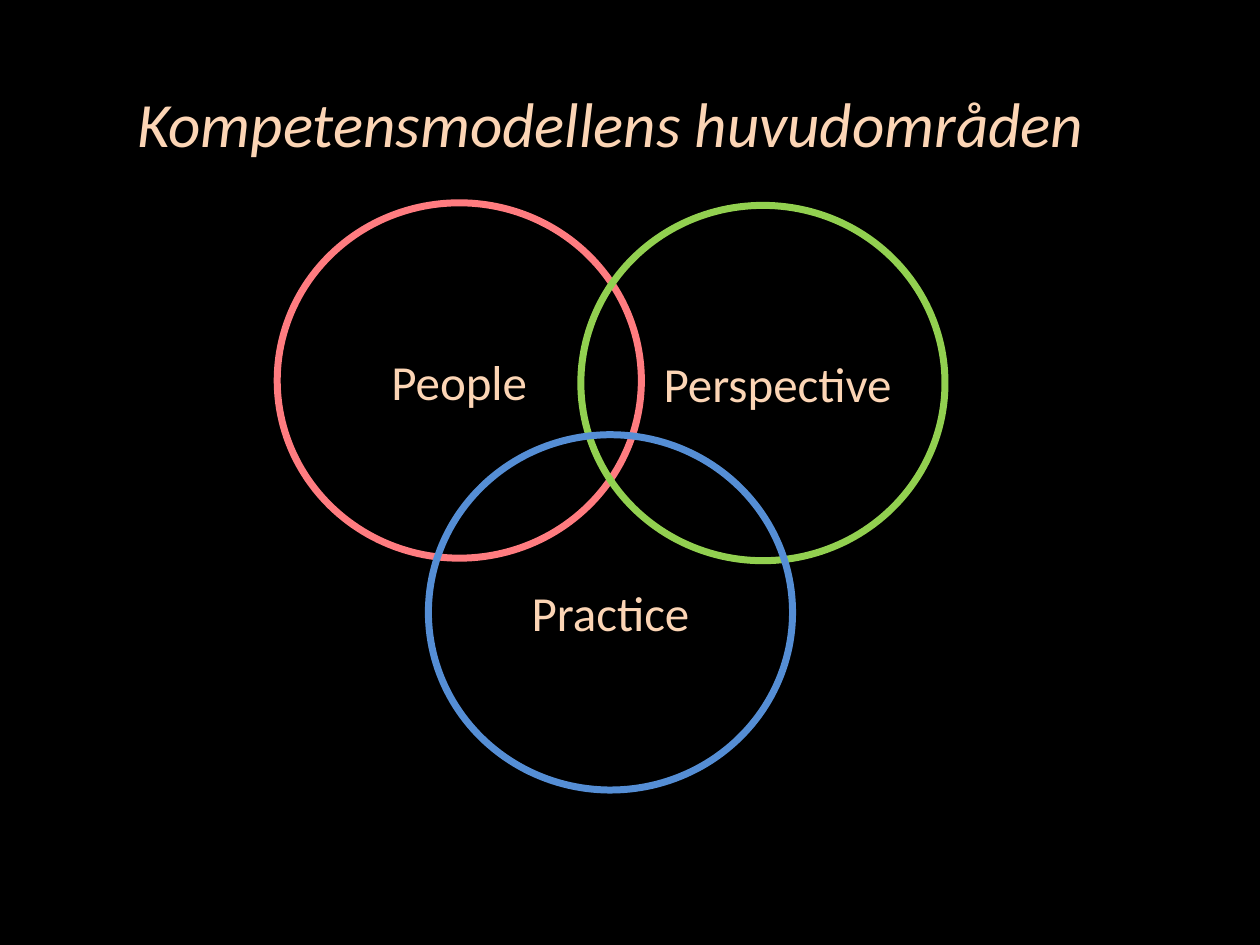
"""Build a slide with three overlapping circles for the areas of a competence model."""
from pptx import Presentation
from pptx import util as u
from pptx.dml.color import RGBColor
from pptx.enum import shapes, text

BLACK = RGBColor(0x00, 0x00, 0x00)
PEACH = RGBColor(0xFC, 0xD5, 0xB5)
CORAL = RGBColor(0xFF, 0x7C, 0x80)
GREEN = RGBColor(0x92, 0xD0, 0x50)
BLUE = RGBColor(0x55, 0x8E, 0xD5)

WIDTH, HEIGHT = 10, 7.5
HEADING = "Kompetensmodellens huvudområden"
HEADING_BOX = (0.93, 0.62, 7.83, 0.71)
CIRCLE_SIZE = (2.89, 2.82)
CENTER, RIGHT = text.PP_ALIGN.CENTER, text.PP_ALIGN.RIGHT
EVEN = {"word_wrap": True}
SHIFTED = {"word_wrap": False, "margin_left": u.Inches(0.67), "margin_right": 0}
AREAS = [
    ("People", CORAL, (2.2, 1.61), CENTER, EVEN),
    ("Perspective", GREEN, (4.61, 1.63), RIGHT, SHIFTED),
    ("Practice", BLUE, (3.4, 3.45), CENTER, EVEN),
]


def write(frame, words, size, align=CENTER, italic=False, **layout):
    for key, value in layout.items():
        setattr(frame, key, value)
    paragraph = frame.paragraphs[0]
    paragraph.alignment = align
    run = paragraph.add_run()
    run.text = words
    looks = {"name": "Calibri", "size": u.Pt(size), "italic": italic}
    for key, value in looks.items():
        setattr(run.font, key, value)
    run.font.color.rgb = PEACH


def add_flat(slide, kind, box):
    flat = slide.shapes.add_shape(kind, *map(u.Inches, box))
    flat.shadow.inherit = False
    return flat


def main():
    deck = Presentation()
    deck.slide_width, deck.slide_height = u.Inches(WIDTH), u.Inches(HEIGHT)
    slide = deck.slides.add_slide(deck.slide_layouts[6])

    backdrop = add_flat(slide, shapes.MSO_SHAPE.RECTANGLE, (0, 0, WIDTH, HEIGHT))
    backdrop.fill.solid()
    backdrop.fill.fore_color.rgb = BLACK
    backdrop.line.fill.background()

    heading = slide.shapes.add_textbox(*map(u.Inches, HEADING_BOX))
    write(heading.text_frame, HEADING, 36, italic=True, word_wrap=True)

    for area, color, corner, align, layout in AREAS:
        circle = add_flat(slide, shapes.MSO_SHAPE.OVAL, corner + CIRCLE_SIZE)
        circle.fill.background()
        circle.line.color.rgb = color
        circle.line.width = u.Pt(4)
        write(circle.text_frame, area, 28, align,
              vertical_anchor=text.MSO_ANCHOR.MIDDLE, **layout)

    deck.save("out.pptx")


if __name__ == "__main__":
    main()
